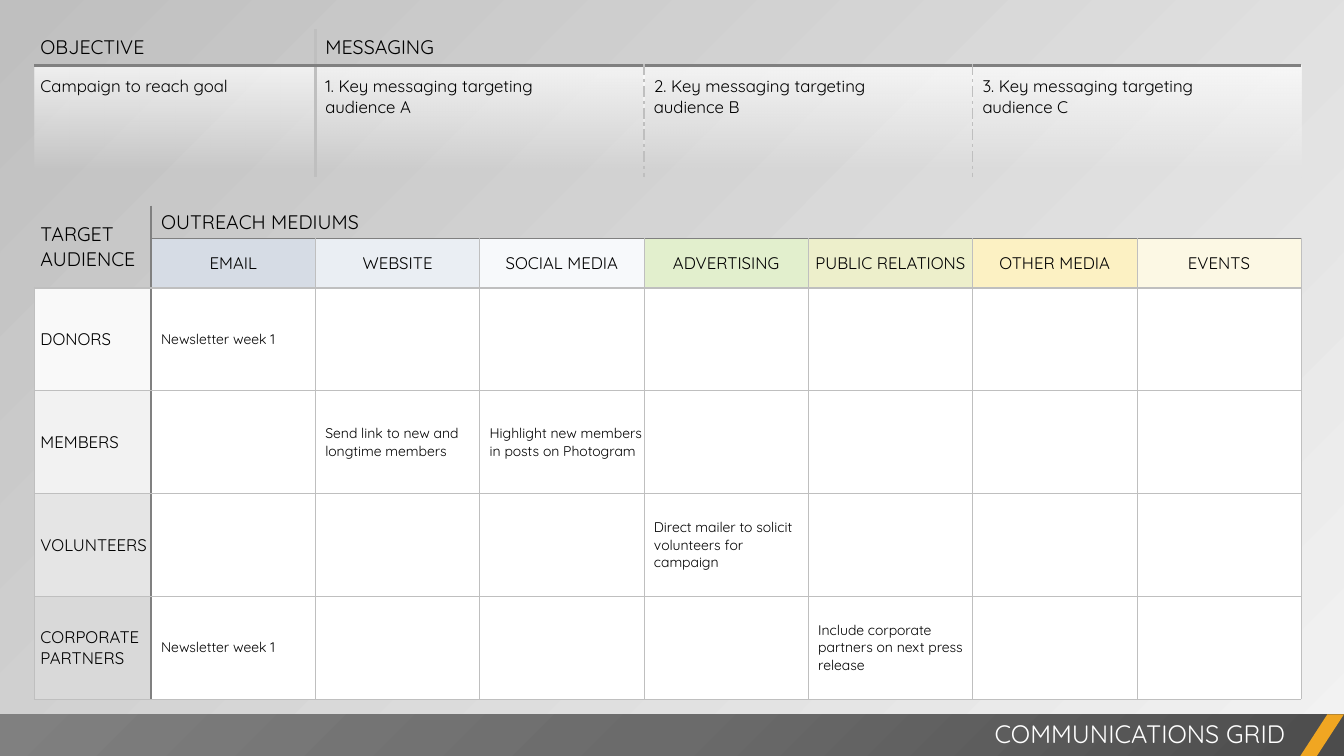
from dataclasses import dataclass

from lxml import etree
from pptx import Presentation
from pptx import util as u
from pptx.dml.color import RGBColor
from pptx.enum import shapes, text
from pptx.oxml.ns import nsdecls, qn


@dataclass(frozen=True)
class Theme:
    font: str = "Quicksand"
    ink: str = "000000"
    white: str = "FFFFFF"
    accent: str = "F0A622"
    mid: str = "808080"
    rule: str = "BFBFBF"
    title: int = 18
    heading: int = 14
    label: int = 12
    note: int = 10
    page_stops: tuple = ((0, "F2F2F2", 40), (100, "BFBFBF", 100))
    bar_stops: tuple = ((0, "4C4C4C", 100), (50, "6B6B6B", 100), (100, "808080", 100))
    fade_stops: tuple = ((0, "FFFFFF", 75), (93, "FFFFFF", 0))
    mediums: tuple = ("D6DCE5", "EAEEF3", "F7F9FB", "E2EFCD", "EDEFCB", "FCF1C3", "FCF8E4")
    audiences: tuple = ("F9F9F9", "F2F2F2", "E5E5E5", "D9D9D9")


THEME = Theme()
TABLE_STYLE = "{2D5ABB26-0587-4C30-8999-92F81FD0307C}"  # plain, without grid
LEFT = 0.86
WIDTH, HEIGHT = 33.87, 19.05
BAR_TOP, BAR_HEIGHT = 18, 1.05

# Border styles: colour, points, dash
HAIRLINE = (THEME.rule, 0.5, "solid")
HEAVY = (THEME.rule, 2.25, "solid")
DASHED = (THEME.rule, 1, "sysDashDot")
DARK_THIN = (THEME.mid, 1, "solid")
DARK_MEDIUM = (THEME.mid, 1.5, "solid")
DARK_HEAVY = (THEME.mid, 2.25, "solid")

MEDIUMS = ("EMAIL", "WEBSITE", "SOCIAL MEDIA", "ADVERTISING",
           "PUBLIC RELATIONS", "OTHER MEDIA", "EVENTS")
AUDIENCES = ("DONORS", "MEMBERS", "VOLUNTEERS", "CORPORATE PARTNERS")
ACTIVITIES = {
    (2, 1): "Newsletter week 1",
    (3, 2): "Send link to new and longtime members",
    (3, 3): "Highlight new members in posts on Photogram",
    (4, 4): "Direct mailer to solicit volunteers for campaign",
    (5, 1): "Newsletter week 1",
    (5, 5): "Include corporate partners on next press release",
}


def messaging_vertical(row, edge):
    if edge == 1:
        return HEAVY
    return DASHED if row == 1 and edge in (2, 3) else None


def messaging_horizontal(column, edge):
    return DARK_HEAVY if edge == 1 else None


def outreach_vertical(row, edge):
    if edge == 1:
        return DARK_MEDIUM
    first_row = 1 if edge else 2
    return HAIRLINE if row >= first_row else None


def outreach_horizontal(column, edge):
    if edge < 2:
        return DARK_THIN if edge and column else None
    return HEAVY if edge == 2 else HAIRLINE


class PageBuilder:
    def __init__(self, page, theme):
        self.page = page
        self.theme = theme

    def gradient(self, fill, owner, stops, direction):
        """Give the owner's fill a gradient with per-stop opacity."""
        fill.solid()
        marks = "".join(
            f'<a:gs pos="{place * 1000}"><a:srgbClr val="{colour}">'
            f'<a:alpha val="{opacity * 1000}"/></a:srgbClr></a:gs>'
            for place, colour, opacity in stops)
        solid = owner.find(qn("a:solidFill"))
        owner.replace(solid, etree.fromstring(
            f'<a:gradFill {nsdecls("a")} rotWithShape="1"><a:gsLst>{marks}</a:gsLst>'
            f'{direction}</a:gradFill>'))

    def background(self):
        fill = self.page.background.fill
        fill.solid()
        owner = self.page.element.find(".//" + qn("p:bgPr"))
        self.gradient(fill, owner, self.theme.page_stops, '<a:lin ang="13500000" scaled="0"/>')

    def set_words(self, frame, words, size, colour, **layout):
        """Fill a text frame; layout holds paragraph settings."""
        para = frame.paragraphs[0]
        para.text = words
        for name, value in layout.items():
            setattr(para, name, value)
        for span in para.runs:
            for name, value in {"name": self.theme.font, "size": u.Pt(size), "bold": False}.items():
                setattr(span.font, name, value)
            span.font.color.rgb = RGBColor.from_string(colour)

    def shape(self, kind, left, top, width, height, colour):
        shape = self.page.shapes.add_shape(kind, *map(u.Cm, (left, top, width, height)))
        shape.shadow.inherit = False
        shape.line.fill.background()
        shape.fill.solid()
        shape.fill.fore_color.rgb = RGBColor.from_string(colour)
        return shape

    def title(self, words, left, top, width, height):
        title = self.page.shapes.title
        place = {"left": left, "top": top, "width": width, "height": height}
        for name, value in place.items():
            setattr(title, name, u.Cm(value))
        self.page.shapes.element.append(title.element)  # in front of the bar
        frame = title.text_frame
        settings = {"word_wrap": True, "auto_size": text.MSO_AUTO_SIZE.NONE,
                    "vertical_anchor": text.MSO_ANCHOR.TOP}
        for name, value in settings.items():
            setattr(frame, name, value)
        self.set_words(frame, words, self.theme.title, self.theme.white,
                       alignment=text.PP_ALIGN.RIGHT)

    def table(self, top, columns, rows):
        frame = self.page.shapes.add_table(
            len(rows), len(columns), *map(u.Cm, (LEFT, top, sum(columns), sum(rows))))
        table = frame.table
        table.first_row = table.horz_banding = False
        frame.element.find(".//" + qn("a:tableStyleId")).text = TABLE_STYLE
        for column, width in zip(table.columns, columns):
            column.width = u.Cm(width)
        for row, height in zip(table.rows, rows):
            row.height = u.Cm(height)
        for cell in table.iter_cells():
            cell.fill.background()
            for side in ("left", "top", "right", "bottom"):
                setattr(cell, f"margin_{side}", 0)
        return table

    def cell(self, cell, words, size, inset=0.25, top=0, centred=False,
             anchor=text.MSO_ANCHOR.MIDDLE):
        settings = {"margin_left": u.Cm(inset), "margin_top": u.Cm(top),
                    "vertical_anchor": anchor}
        for name, value in settings.items():
            setattr(cell, name, value)
        align = text.PP_ALIGN.CENTER if centred else text.PP_ALIGN.LEFT
        self.set_words(cell.text_frame, words, size, self.theme.ink, alignment=align)

    def cell_fill(self, cell, colour):
        cell.fill.solid()
        cell.fill.fore_color.rgb = RGBColor.from_string(colour)

    def borders(self, table, vertical, horizontal):
        """Draw each cell's edges by the two edge rules."""
        for row in range(len(table.rows)):
            for column in range(len(table.columns)):
                cell = table.cell(row, column)
                edges = {"L": vertical(row, column),
                         "R": vertical(row, column + cell.span_width),
                         "T": horizontal(column, row),
                         "B": horizontal(column, row + cell.span_height)}
                drawn = [(side, style) for side, style in edges.items() if style]
                for index, (side, (colour, points, dash)) in enumerate(drawn):
                    cell._tc.get_or_add_tcPr().insert(index, etree.fromstring(
                        f'<a:ln{side} {nsdecls("a")} w="{int(u.Pt(points))}"><a:solidFill>'
                        f'<a:srgbClr val="{colour}"/></a:solidFill>'
                        f'<a:prstDash val="{dash}"/></a:ln{side}>'))


def main():
    deck = Presentation()
    deck.slide_width, deck.slide_height = u.Cm(WIDTH), u.Cm(HEIGHT)
    builder = PageBuilder(deck.slides.add_slide(deck.slide_layouts[5]), THEME)
    builder.background()

    # Outreach grid
    grid = builder.table(5.18, [2.95] + [4.14] * 7, [0.84, 0.86] + [2.59] * 4)
    grid.cell(0, 0).merge(grid.cell(1, 0))
    grid.cell(0, 1).merge(grid.cell(0, 7))
    builder.cell(grid.cell(0, 0), "TARGET AUDIENCE", THEME.heading, inset=0.16)
    builder.cell(grid.cell(0, 1), "OUTREACH MEDIUMS", THEME.heading)
    for column, (medium, colour) in enumerate(zip(MEDIUMS, THEME.mediums), 1):
        builder.cell(grid.cell(1, column), medium, THEME.label, inset=0, centred=True)
        builder.cell_fill(grid.cell(1, column), colour)
    for row, (audience, colour) in enumerate(zip(AUDIENCES, THEME.audiences), 2):
        builder.cell(grid.cell(row, 0), audience, THEME.label, inset=0.16)
        builder.cell_fill(grid.cell(row, 0), colour)
        for column in range(1, 8):
            builder.cell_fill(grid.cell(row, column), THEME.white)
    for place, activity in ACTIVITIES.items():
        builder.cell(grid.cell(*place), activity, THEME.note)
    builder.borders(grid, outreach_vertical, outreach_horizontal)

    # Footer bar and title
    bar = builder.shape(shapes.MSO_SHAPE.RECTANGLE, 0, BAR_TOP, WIDTH, BAR_HEIGHT, THEME.mid)
    builder.gradient(bar.fill, bar.element.spPr, THEME.bar_stops,
                     '<a:path path="circle"><a:fillToRect l="100000" t="100000"/></a:path>')
    slash = builder.shape(shapes.MSO_SHAPE.PARALLELOGRAM, 32.77, BAR_TOP, 1.1, BAR_HEIGHT,
                          THEME.accent)
    slash.adjustments[0] = 0.65
    builder.title("COMMUNICATIONS GRID", 13.34, 17.98, 19.3, 1.02)

    # Objective and messaging
    plan = builder.table(0.74, [7.09] + [8.28] * 3, [0.91, 2.82])
    plan.cell(0, 1).merge(plan.cell(0, 3))
    builder.cell(plan.cell(0, 0), "OBJECTIVE", THEME.heading, inset=0.16)
    builder.cell(plan.cell(0, 1), "MESSAGING", THEME.heading)
    messages = [f"{number}. Key messaging targeting\vaudience {letter}"
                for number, letter in enumerate("ABC", 1)]
    for column, words in enumerate(["Campaign to reach goal"] + messages):
        cell = plan.cell(1, column)
        builder.cell(cell, words, THEME.label, inset=0.25 if column else 0.16, top=0.25,
                     anchor=text.MSO_ANCHOR.TOP)
        builder.gradient(cell.fill, cell._tc.get_or_add_tcPr(), THEME.fade_stops,
                         '<a:lin ang="5400000" scaled="0"/>')
    builder.borders(plan, messaging_vertical, messaging_horizontal)

    deck.save("out.pptx")


if __name__ == "__main__":
    main()
